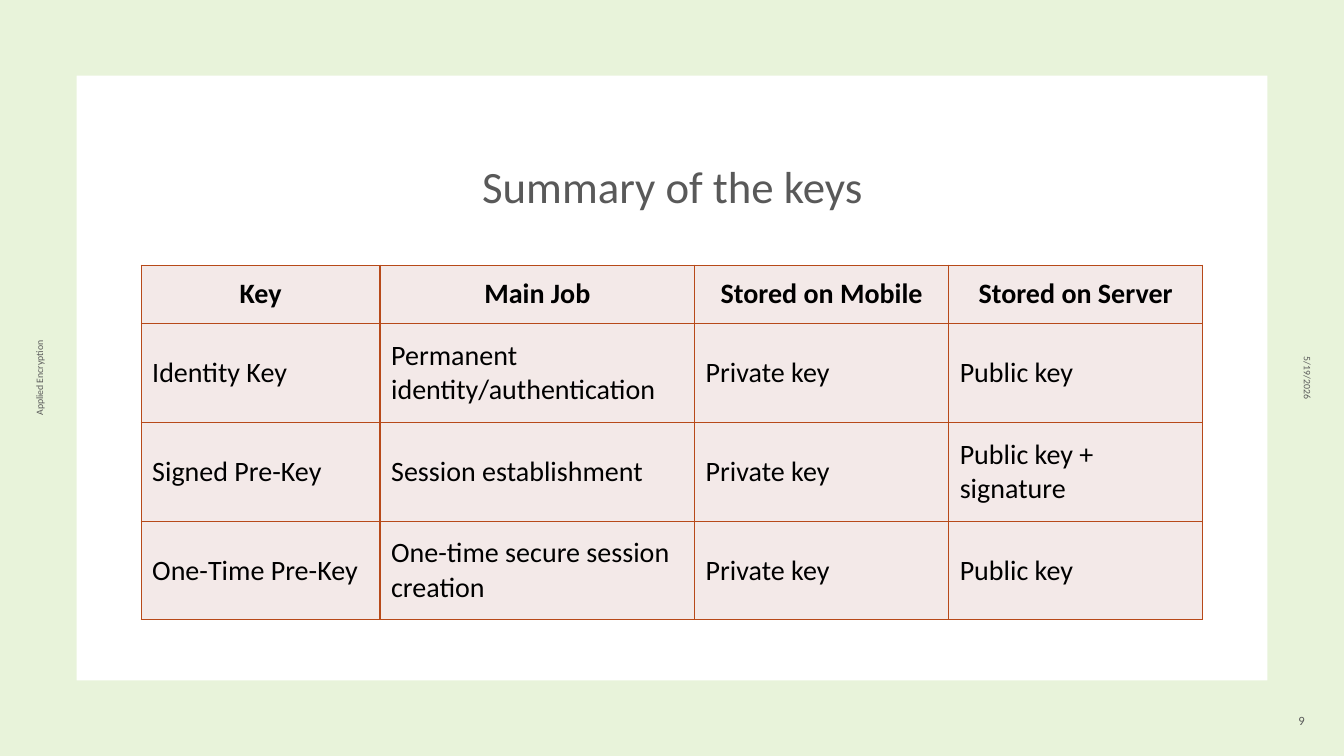
from lxml.etree import SubElement
from pptx import Presentation
from pptx.dml.color import RGBColor
from pptx.enum.shapes import MSO_SHAPE
from pptx.enum.text import MSO_ANCHOR, PP_ALIGN
from pptx.oxml.ns import qn
from pptx.util import Inches, Pt

COLORS = {
    "frame": "E8F3DA",
    "panel": "FFFFFF",
    "text": "595959",
    "cell": "F3E9E8",
    "cell text": "000000",
    "border": "B74919",
}
FONT = "Calibri"


def set_font(para, size, color, bold=False):
    para.font.name = FONT
    para.font.size = Pt(size)
    para.font.bold = bold
    para.font.color.rgb = RGBColor.from_string(COLORS[color])


def add_borders(cell):
    """Draw a thin line on all four sides; call before filling the cell."""
    properties = cell._tc.get_or_add_tcPr()
    for side in ("a:lnL", "a:lnR", "a:lnT", "a:lnB"):
        line = SubElement(properties, qn(side), w=str(Pt(1)))
        fill = SubElement(line, qn("a:solidFill"))
        SubElement(fill, qn("a:srgbClr"), val=COLORS["border"])


deck = Presentation()
deck.slide_width = Inches(13.33)
deck.slide_height = Inches(7.5)
page = deck.slides.add_slide(deck.slide_layouts[6])

# Green frame and white panel
for color, area in (
    ("frame", (0, 0, 13.33, 7.5)),
    ("panel", (0.76, 0.75, 11.81, 6)),
):
    block = page.shapes.add_shape(MSO_SHAPE.RECTANGLE, *map(Inches, area))
    block.shadow.inherit = False
    block.fill.solid()
    block.fill.fore_color.rgb = RGBColor.from_string(COLORS[color])
    block.line.fill.background()

# Title, side labels and page number
labels = [
    ("Summary of the keys", (1.59, 1.13, 10.16, 1.5), 0, 32, PP_ALIGN.CENTER),
    ("Applied Encryption", (-1.86, 3.55, 4.5, 0.4), 270, 7, PP_ALIGN.CENTER),
    ("5/19/2026", (9.97, 3.55, 6, 0.4), 90, 7, PP_ALIGN.CENTER),
    ("9", (10.04, 6.95, 3, 0.4), 0, 9, PP_ALIGN.RIGHT),
]
for text, area, rotation, size, align in labels:
    box = page.shapes.add_textbox(*map(Inches, area))
    box.rotation = rotation
    frame = box.text_frame
    frame.word_wrap = True
    frame.vertical_anchor = MSO_ANCHOR.MIDDLE
    para = frame.paragraphs[0]
    para.text = text
    para.alignment = align
    if size == 32:
        para.line_spacing = 0.9
    else:
        para.space_after = Pt(6)
    set_font(para, size, "text")

# Table of keys
rows = [
    ("Key", "Main Job", "Stored on Mobile", "Stored on Server"),
    ("Identity Key", "Permanent identity/authentication", "Private key", "Public key"),
    ("Signed Pre-Key", "Session establishment", "Private key", "Public key + signature"),
    ("One-Time Pre-Key", "One-time secure session creation", "Private key", "Public key"),
]
widths = (2.37, 3.12, 2.52, 2.52)
heights = (0.58, 0.98, 0.98, 0.98)
table = page.shapes.add_table(
    len(rows), len(widths),
    Inches(1.4), Inches(2.63), Inches(sum(widths)), Inches(sum(heights)),
).table
table.first_row = False
table.horz_banding = False
for column, width in zip(table.columns, widths):
    column.width = Inches(width)

for row_index, (row, height) in enumerate(zip(rows, heights)):
    table.rows[row_index].height = Inches(height)
    is_header = row_index == 0
    for column_index, text in enumerate(row):
        cell = table.cell(row_index, column_index)
        add_borders(cell)
        cell.fill.solid()
        cell.fill.fore_color.rgb = RGBColor.from_string(COLORS["cell"])
        cell.vertical_anchor = MSO_ANCHOR.MIDDLE
        cell.margin_left = cell.margin_right = Inches(0.11)
        cell.margin_top = cell.margin_bottom = Inches(0.06)
        para = cell.text_frame.paragraphs[0]
        para.text = text
        para.alignment = PP_ALIGN.CENTER if is_header else PP_ALIGN.LEFT
        set_font(para, 20, "cell text", bold=is_header)

deck.save("out.pptx")
